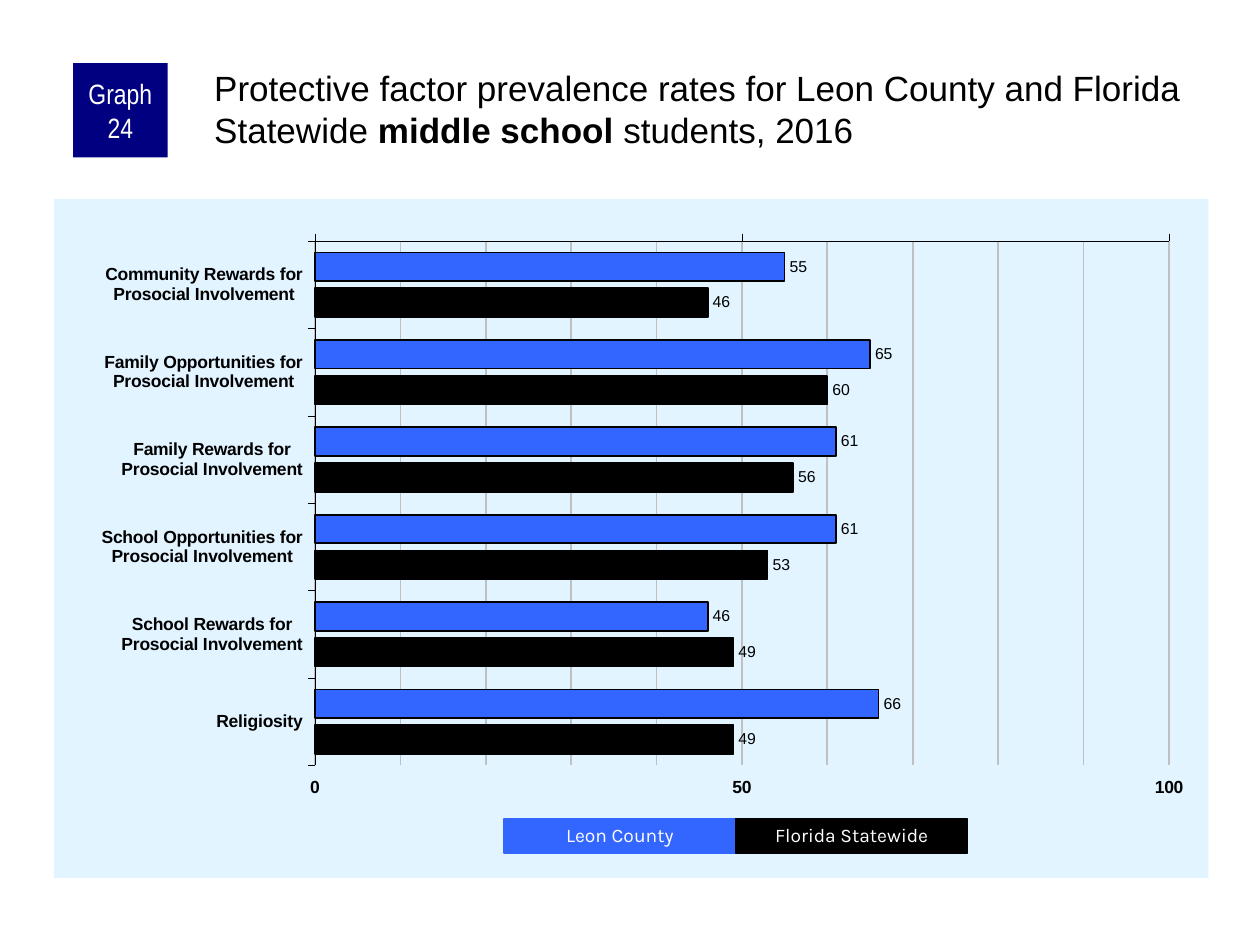
from copy import deepcopy
from typing import NamedTuple

from pptx import Presentation
from pptx.chart.data import CategoryChartData
from pptx.dml.color import RGBColor
from pptx.enum.chart import (XL_CHART_TYPE, XL_LABEL_POSITION,
                             XL_TICK_LABEL_POSITION, XL_TICK_MARK)
from pptx.enum.shapes import MSO_SHAPE
from pptx.enum.text import MSO_ANCHOR, PP_ALIGN
from pptx.oxml import parse_xml
from pptx.oxml.ns import qn
from pptx.util import Inches, Pt

BARS = XL_CHART_TYPE.BAR_CLUSTERED
OUTER = XL_LABEL_POSITION.OUTSIDE_END
HIGH = XL_TICK_LABEL_POSITION.HIGH
TICK_OUT, NO_TICK = XL_TICK_MARK.OUTSIDE, XL_TICK_MARK.NONE
RECT = MSO_SHAPE.RECTANGLE
MIDDLE, CENTER = MSO_ANCHOR.MIDDLE, PP_ALIGN.CENTER

BLACK, WHITE, GRAY = "000000", "FFFFFF", "C0C0C0"
BLUE, NAVY, PALE = "3366FF", "000080", "E1F4FF"
PLOT = {"x": 0.226, "y": 0.062, "w": 0.74, "h": 0.772}
NS = ('xmlns:c="http://schemas.openxmlformats.org/drawingml/2006/chart" '
      'xmlns:a="http://schemas.openxmlformats.org/drawingml/2006/main"')


class Group(NamedTuple):
    name: str
    color: str
    rates: tuple[int, ...]


class Box(NamedTuple):
    text: str
    left: float
    top: float
    width: float
    height: float
    fill: str
    font: str
    size: float
    edge: bool = False
    spacing: float = 1.0


FACTORS = [
    "Community Rewards for\nProsocial Involvement",
    "Family Opportunities for\nProsocial Involvement",
    "Family Rewards for\nProsocial Involvement",
    "School Opportunities for\nProsocial Involvement",
    "School Rewards for\nProsocial Involvement",
    "Religiosity",
]
GROUPS = [
    Group("Leon County", BLUE, (55, 65, 61, 61, 46, 66)),
    Group("Florida Statewide", BLACK, (46, 60, 56, 53, 49, 49)),
]
TITLE = [
    ("Protective factor prevalence rates for Leon County and Florida Statewide ", False),
    ("middle school ", True),
    ("students, 2016", False),
]


def paint(target, color: str) -> None:
    """Give a shape, line or font one solid colour."""
    target.fill.solid()
    target.fill.fore_color.rgb = RGBColor.from_string(color)


def stroke(line, color: str, width: float) -> None:
    paint(line, color)
    line.width = Pt(width)


def style(font, name: str, size: float, color: str, bold: bool = False) -> None:
    font.name, font.size, font.bold = name, Pt(size), bold
    paint(font, color)


def frame_chart(chart) -> None:
    """Set the chart background and the inner plot layout."""
    space = chart.element
    space.find(qn("c:chart")).addnext(parse_xml(
        f'<c:spPr {NS}><a:solidFill><a:srgbClr val="{PALE}"/></a:solidFill>'
        '<a:ln><a:noFill/></a:ln></c:spPr>'))
    area = space.find(".//" + qn("c:plotArea"))
    for old in area.findall(qn("c:layout")):
        area.remove(old)
    parts = "".join(f'<c:{key} val="{val}"/>' for key, val in PLOT.items())
    area.insert(0, parse_xml(
        f'<c:layout {NS}><c:manualLayout><c:layoutTarget val="inner"/>'
        f'<c:xMode val="edge"/><c:yMode val="edge"/>{parts}'
        '</c:manualLayout></c:layout>'))


def add_grid(axis) -> None:
    """Draw major gridlines and give the minor ones the same line."""
    axis.has_major_gridlines = axis.has_minor_gridlines = True
    grid = axis.major_gridlines.format.line
    stroke(grid, GRAY, 1)
    root = axis.format.line.fill and axis.major_gridlines.format
    major = chart_part(axis, "c:majorGridlines")
    minor = chart_part(axis, "c:minorGridlines")
    minor.append(deepcopy(major.find(qn("c:spPr"))))


def chart_part(axis, tag: str):
    return axis._element.find(qn(tag))


def style_axes(chart) -> None:
    factor, rate = chart.category_axis, chart.value_axis
    for axis in (factor, rate):
        axis.major_tick_mark, axis.minor_tick_mark = TICK_OUT, NO_TICK
        stroke(axis.format.line, BLACK, 0.25)
        style(axis.tick_labels.font, "Arial", 10, BLACK, True)
    factor.reverse_order = True
    rate.tick_label_position = HIGH
    rate.minimum_scale, rate.maximum_scale = 0, 100
    rate.major_unit, rate.minor_unit = 50, 10
    add_grid(rate)


def add_rates(slide) -> None:
    data = CategoryChartData()
    data.categories = FACTORS
    for group in GROUPS:
        data.add_series(group.name, group.rates)
    chart = slide.shapes.add_chart(BARS, Inches(0.43), Inches(1.58),
                                   Inches(9.16), Inches(5.39), data).chart
    chart.has_legend = chart.has_title = False
    style(chart.font, "Arial", 11.8, BLACK)
    frame_chart(chart)
    style_axes(chart)
    plot = chart.plots[0]
    plot.gap_width, plot.overlap = 80, -25
    plot.vary_by_categories = False
    for series, group in zip(plot.series, GROUPS):
        series.invert_if_negative = False
        paint(series.format, group.color)
        stroke(series.format.line, BLACK, 1)
        labels = series.data_labels
        labels.show_value, labels.position = True, OUTER
        style(labels.font, "Arial", 9, BLACK)


def add_box(slide, box: Box) -> None:
    shape = slide.shapes.add_shape(RECT, Inches(box.left), Inches(box.top),
                                   Inches(box.width), Inches(box.height))
    shape.shadow.inherit = False
    paint(shape, box.fill)
    if box.edge:
        stroke(shape.line, box.fill, 0.75)
    else:
        shape.line.fill.background()
    frame = shape.text_frame
    frame.text = box.text
    frame.word_wrap, frame.vertical_anchor = True, MIDDLE
    frame.margin_left = frame.margin_right = Inches(0.05)
    frame.margin_top = frame.margin_bottom = 0
    para = frame.paragraphs[0]
    para.alignment, para.line_spacing = CENTER, box.spacing
    style(para.runs[0].font, box.font, box.size, WHITE)


def add_title(slide) -> None:
    frame = slide.shapes.add_textbox(Inches(1.67), Inches(0.5), Inches(7.92),
                                     Inches(0.83)).text_frame
    frame.word_wrap = True
    frame.margin_left = frame.margin_top = Inches(0.03)
    frame.margin_right = frame.margin_bottom = 0
    for text, bold in TITLE:
        run = frame.paragraphs[0].add_run()
        run.text = text
        style(run.font, "Arial", 20, BLACK, bold)


def main() -> None:
    deck = Presentation()
    deck.slide_width, deck.slide_height = Inches(10), Inches(7.5)
    slide = deck.slides.add_slide(deck.slide_layouts[6])
    add_rates(slide)
    add_box(slide, Box("Graph 24", 0.58, 0.5, 0.75, 0.75, NAVY, "Arial Narrow", 16))
    add_title(slide)
    for i, group in enumerate(GROUPS):
        add_box(slide, Box(group.name, 4 + 1.84 * i, 6.5, 1.84, 0.27,
                           group.color, "Karla", 11, True, 0.9))
    deck.save("out.pptx")


if __name__ == "__main__":
    main()
